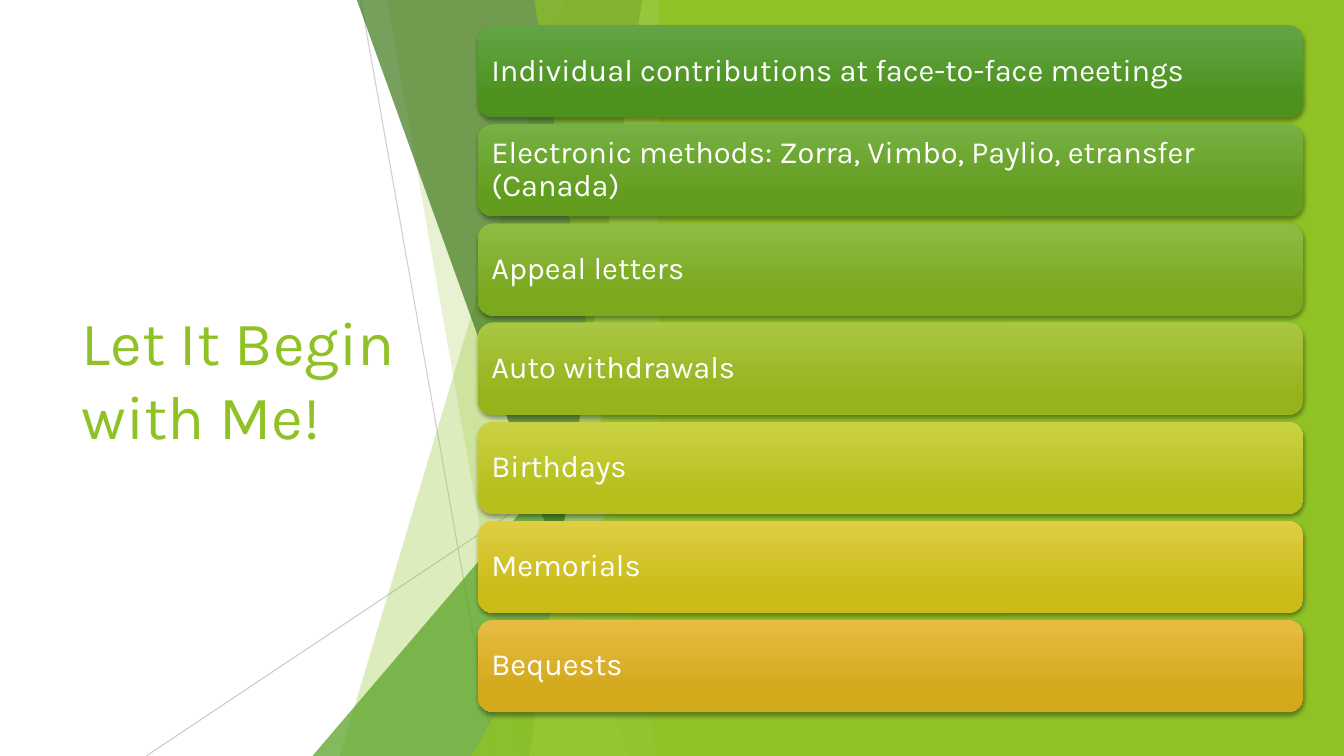
from dataclasses import dataclass

from lxml import etree
from pptx import Presentation
from pptx import util as u
from pptx.dml.color import RGBColor
from pptx.enum import shapes, text
from pptx.oxml.ns import qn

FONT = "Karla"
GREEN = "90C226"
WHITE = "FFFFFF"
EDGE = 49.95  # column where the facets end

prs = Presentation()
prs.slide_width, prs.slide_height = u.Inches(13.33), u.Inches(7.5)
s = prs.slides.add_slide(prs.slide_layouts[5])


@dataclass
class Facet:
    """Full-height band running from its slanted left side to EDGE."""
    top_col: float
    bottom_col: float
    color: str
    opacity: int


@dataclass
class Corner:
    """Right-angled triangle in the lower right of the facets."""
    col: float
    row: float
    color: str
    opacity: int


@dataclass
class Bar:
    label: str
    light: str
    dark: str


# Grid of 100 columns by 100 rows
def cols(n: float) -> int:
    return round(prs.slide_width * n / 100)


def rows(n: float) -> int:
    return round(prs.slide_height * n / 100)


def rgb(hex_color: str) -> RGBColor:
    return RGBColor.from_string(hex_color)


def set_opacity(sp, percent: int) -> None:
    color = next(sp._element.spPr.iter(qn("a:srgbClr")))
    etree.SubElement(color, qn("a:alpha"), val=str(percent * 1000))


def paint(sp, color: str, opacity: int = 100) -> None:
    sp.shadow.inherit = False
    sp.fill.solid()
    sp.fill.fore_color.rgb = rgb(color)
    sp.line.fill.background()
    if opacity < 100:
        set_opacity(sp, opacity)


def add_line(x1: float, y1: float, x2: float, y2: float, opacity: int) -> None:
    line = s.shapes.add_connector(shapes.MSO_CONNECTOR.STRAIGHT,
                                  cols(x1), rows(y1), cols(x2), rows(y2))
    line.line.color.rgb = rgb("BFBFBF")
    line.line.width = u.Pt(0.75)
    set_opacity(line, opacity)
    etree.SubElement(line._element.spPr, qn("a:effectLst"))


def add_facet(facet: Facet) -> None:
    builder = s.shapes.build_freeform(cols(facet.top_col), 0)
    builder.add_line_segments([(cols(EDGE), 0), (cols(EDGE), rows(100)),
                               (cols(facet.bottom_col), rows(100))])
    paint(builder.convert_to_shape(), facet.color, facet.opacity)


def add_corner(corner: Corner) -> None:
    sp = s.shapes.add_shape(shapes.MSO_SHAPE.ISOSCELES_TRIANGLE,
                            cols(corner.col), rows(corner.row),
                            cols(EDGE - corner.col), rows(100 - corner.row))
    sp.adjustments[0] = 1.0
    paint(sp, corner.color, corner.opacity)


def style_text(tf, size: int, color: str) -> None:
    tf.word_wrap = True
    tf.vertical_anchor = text.MSO_ANCHOR.MIDDLE
    for p in tf.paragraphs:
        p.alignment = text.PP_ALIGN.LEFT
        for r in p.runs:
            r.font.name = FONT
            r.font.size = u.Pt(size)
            r.font.color.rgb = rgb(color)


def add_bar(bar: Bar, row: float) -> None:
    sp = s.shapes.add_shape(shapes.MSO_SHAPE.ROUNDED_RECTANGLE,
                            cols(35.55), rows(row), cols(61.43), rows(12.2))
    sp.line.fill.background()
    sp.fill.gradient()
    sp.fill.gradient_angle = 270
    first, last = sp.fill.gradient_stops
    first.color.rgb, first.position = rgb(bar.light), 0
    last.color.rgb, last.position = rgb(bar.dark), 0.78

    # Soft shadow below the bar
    sp.shadow.inherit = False
    effects = sp._element.spPr.find(qn("a:effectLst"))
    shadow = etree.SubElement(effects, qn("a:outerShdw"),
                              blurRad=str(u.Pt(3)), dist=str(u.Pt(2)),
                              dir="5400000", rotWithShape="0")
    color = etree.SubElement(shadow, qn("a:srgbClr"), val="000000")
    etree.SubElement(color, qn("a:alpha"), val="35000")

    tf = sp.text_frame
    tf.text = bar.label
    tf.margin_left = tf.margin_right = u.Inches(0.09)
    tf.margin_top = tf.margin_bottom = u.Inches(0.09)
    tf.paragraphs[0].line_spacing = 0.9
    style_text(tf, 22, WHITE)


# Title
title = s.shapes.title
title.left, title.top = cols(5.33), rows(20.13)
title.width, title.height = cols(29.1), rows(59.73)
title.text_frame.text = "Let It Begin with Me!"
title.text_frame.auto_size = text.MSO_AUTO_SIZE.NONE
style_text(title.text_frame, 44, GREEN)

# Faceted backdrop, from back to front
add_line(26.85, 0, 36.82, 100, 75)
add_line(EDGE, 53.73, 10.88, 100, 80)
backdrop = [
    Facet(42.08, 25.28, GREEN, 30),
    Facet(28.8, 38.7, GREEN, 20),
    Corner(23.25, 44.4, "54A021", 72),
    Facet(26.55, 46.8, "3F7819", 70),
    Facet(47.78, 39.38, "C0E474", 70),
    Facet(39.75, 48.83, GREEN, 65),
    Corner(35.1, 52.4, GREEN, 80),
]
for part in backdrop:
    if isinstance(part, Facet):
        add_facet(part)
    else:
        add_corner(part)

# Green panel on the right
panel = s.shapes.add_shape(shapes.MSO_SHAPE.RECTANGLE,
                           cols(49.05), 0, cols(50.95), rows(100))
paint(panel, GREEN)

# Ways to contribute
bars = [
    Bar("Individual contributions at face-to-face meetings", "63A545", "4D921E"),
    Bar("Electronic methods: Zorra, Vimbo, Paylio, etransfer (Canada)",
        "77B044", "629D1E"),
    Bar("Appeal letters", "8EBB44", "7BA81D"),
    Bar("Auto withdrawals", "AAC744", "97B31C"),
    Bar("Birthdays", "CAD243", "B6BF1B"),
    Bar("Memorials", "DFCE43", "CABB19"),
    Bar("Bequests", "E7BC43", "D2A91B"),
]
for i, bar in enumerate(bars):
    add_bar(bar, 3.33 + i * 13.11)

prs.save("out.pptx")
